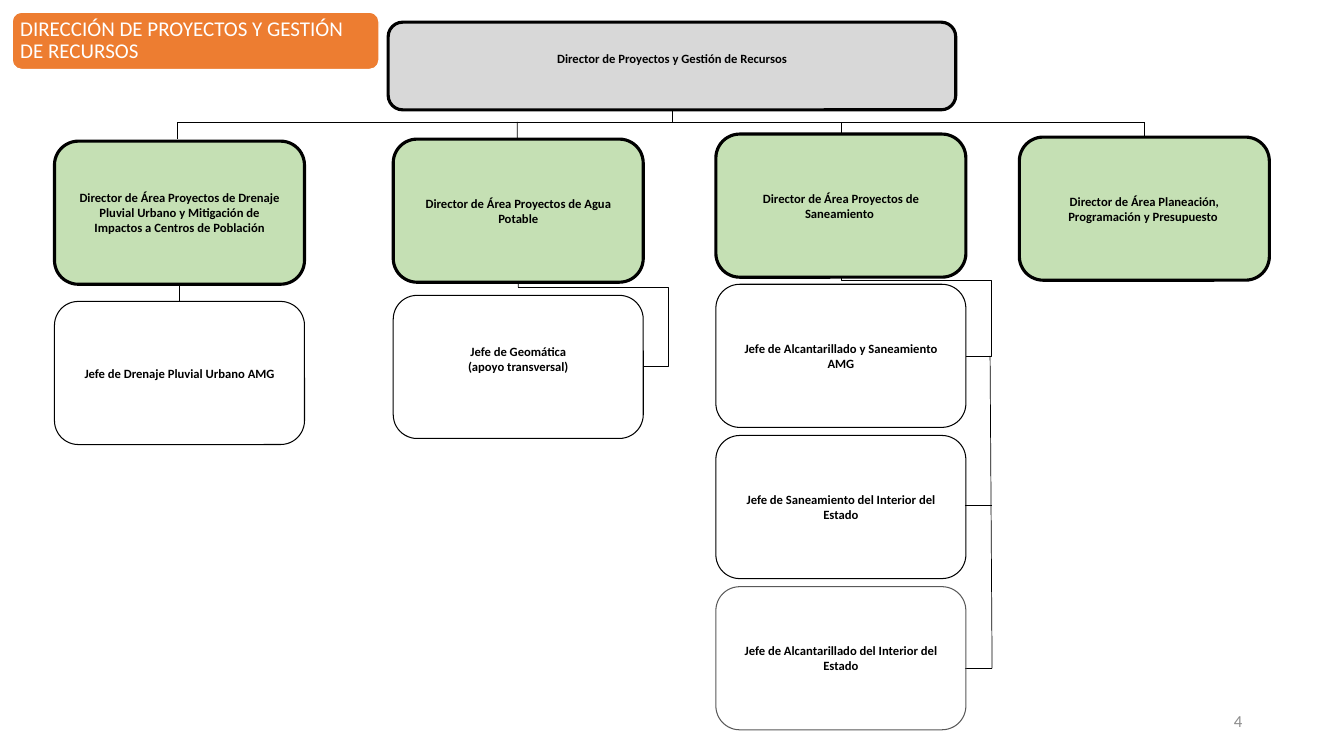
from lxml.etree import SubElement
from pptx import Presentation
from pptx.dml.color import RGBColor
from pptx.enum.shapes import MSO_CONNECTOR, MSO_SHAPE
from pptx.enum.text import MSO_ANCHOR, MSO_AUTO_SIZE, PP_ALIGN
from pptx.oxml.ns import qn
from pptx.util import Inches, Pt


def write(shape, lines, inset, size, color, align, bold=False, extra_bottom=0):
    """Fill a shape with one paragraph per line; extra_bottom lifts the text."""
    frame = shape.text_frame
    settings = {
        "word_wrap": True,
        "auto_size": MSO_AUTO_SIZE.NONE,
        "vertical_anchor": MSO_ANCHOR.MIDDLE,
        "margin_left": Inches(inset),
        "margin_right": Inches(inset),
        "margin_top": Inches(inset),
        "margin_bottom": Inches(inset + extra_bottom),
    }
    for name, value in settings.items():
        setattr(frame, name, value)
    for number, line in enumerate(lines):
        para = frame.paragraphs[0] if number == 0 else frame.add_paragraph()
        para.alignment = align
        span = para.add_run()
        span.text = line
        for name, value in {"name": "Calibri", "size": Pt(size), "bold": bold}.items():
            setattr(span.font, name, value)
        span.font.color.rgb = RGBColor.from_string(color)


def connect(kind, start, end, width):
    line = page.shapes.add_connector(kind, *[Inches(value) for value in start + end])
    line.line.color.rgb = RGBColor.from_string("000000")
    line.line.width = Pt(width)
    SubElement(line.element.spPr, qn("a:effectLst"))
    return line


deck = Presentation()
deck.slide_width, deck.slide_height = Inches(13.33), Inches(7.5)
page = deck.slides.add_slide(deck.slide_layouts[5])

# Heading on its orange band
title = page.shapes.title
title.left, title.top, title.width, title.height = [
    Inches(value) for value in (0.14, 0.15, 3.6, 0.51)]
write(title, ["DIRECCIÓN DE PROYECTOS Y GESTIÓN DE RECURSOS"], 0.06, 15, "FFFFFF",
      PP_ALIGN.LEFT)
title.text_frame.paragraphs[0].line_spacing = 0.9
band = page.shapes.add_shape(
    MSO_SHAPE.ROUNDED_RECTANGLE, Inches(0.12), Inches(0.12), Inches(3.64), Inches(0.57))
band.shadow.inherit = False
band.fill.solid()
band.fill.fore_color.rgb = RGBColor.from_string("ED7D31")
band.line.color.rgb = RGBColor.from_string("FFFFFF")
band.line.width = Pt(1)
title.element.addprevious(band.element)

# Straight connecting lines
BUS_Y = 1.21
straight_lines = [
    ((6.67, 1.1), (6.67, BUS_Y)),
    ((1.76, BUS_Y), (11.35, BUS_Y)),
    ((1.76, 1.38), (1.76, BUS_Y)),
    ((5.14, 2.85), (5.13, BUS_Y)),
    ((8.34, 1.33), (8.34, BUS_Y)),
    ((11.35, 1.36), (11.35, BUS_Y)),
    ((1.78, 2.81), (1.78, 2.99)),
    ((9.82, 3.53), (9.84, 6.63)),
    ((9.57, 5.01), (9.84, 5.01)),
    ((9.57, 6.63), (9.84, 6.63)),
]
for start, end in straight_lines:
    connect(MSO_CONNECTOR.STRAIGHT, start, end, 0.5)

# Bent lines: preset, start, end, rotation in degrees, bend positions
bent_lines = [
    ("bentConnector3", (5.14, 2.85), (6.38, 3.64), 0, [120200]),
    ("bentConnector4", (9.36, 2.52), (8.57, 3.76), 270, [5000, 120200]),
]
for preset, start, end, degrees, bends in bent_lines:
    elbow = connect(MSO_CONNECTOR.ELBOW, start, end, 0.75).element.spPr
    elbow.find(qn("a:xfrm")).set("rot", str(degrees * 60000))
    geometry = elbow.find(qn("a:prstGeom"))
    geometry.set("prst", preset)
    guides = geometry.find(qn("a:avLst"))
    for number, bend in enumerate(bends, 1):
        SubElement(guides, qn("a:gd"), name=f"adj{number}", fmla=f"val {bend}")

# Looks: fill, line colour, line width, inset
HEAD = ("D8D8D8", "000000", 2.25, 0.13)
AREA = ("C5E0B4", "000000", 2.25, 0.13)
CHIEF = (None, "000000", 0.75, 0.1)
GREY_CHIEF = (None, "595959", 0.75, 0.13)
WHITE_CHIEF = ("FFFFFF", "000000", 0.75, 0.1)
WIDTH, HEIGHT = 2.48, 1.42
DRAINAGE_X, WATER_X, SANITATION_X, PLANNING_X = 0.54, 3.9, 7.1, 10.11
LIFT = 0.15

positions = [
    (HEAD, 3.85, 0.22, 5.63, 0.87, ["Director de Proyectos y Gestión de Recursos"], LIFT),
    (AREA, DRAINAGE_X, 1.4, WIDTH, HEIGHT,
     ["Director de Área Proyectos de Drenaje Pluvial Urbano y Mitigación de "
      "Impactos a Centros de Población"], 0),
    (CHIEF, DRAINAGE_X, 2.99, WIDTH, HEIGHT, ["Jefe de Drenaje Pluvial Urbano AMG"], 0),
    (AREA, WATER_X, 1.38, WIDTH, HEIGHT,
     ["Director de Área Proyectos de Agua Potable"], 0),
    (WHITE_CHIEF, WATER_X, 2.93, WIDTH, HEIGHT,
     ["Jefe de Geomática", "(apoyo transversal)"], LIFT),
    (AREA, SANITATION_X, 1.33, WIDTH, HEIGHT,
     ["Director de Área Proyectos de Saneamiento "], 0),
    (CHIEF, SANITATION_X, 2.82, WIDTH, HEIGHT,
     ["Jefe de Alcantarillado y Saneamiento AMG"], 0),
    (CHIEF, SANITATION_X, 4.32, WIDTH, HEIGHT,
     ["Jefe de Saneamiento del Interior del Estado"], 0),
    (GREY_CHIEF, SANITATION_X, 5.82, WIDTH, HEIGHT,
     ["Jefe de Alcantarillado del Interior del Estado"], 0),
    (AREA, PLANNING_X, 1.36, WIDTH, HEIGHT,
     ["Director de Área Planeación, Programación y Presupuesto "], 0),
]
for look, left, top, width, height, lines, lift in positions:
    fill, line_color, line_width, inset = look
    box = page.shapes.add_shape(
        MSO_SHAPE.ROUNDED_RECTANGLE,
        Inches(left), Inches(top), Inches(width), Inches(height))
    box.shadow.inherit = False
    if fill:
        box.fill.solid()
        box.fill.fore_color.rgb = RGBColor.from_string(fill)
    else:
        box.fill.background()
    box.line.color.rgb = RGBColor.from_string(line_color)
    box.line.width = Pt(line_width)
    write(box, lines, inset, 9, "000000", PP_ALIGN.CENTER, True, lift)

page_number = page.shapes.add_textbox(Inches(9.42), Inches(6.95), Inches(3), Inches(0.4))
write(page_number, ["4"], 0.1, 12, "8C8C8C", PP_ALIGN.RIGHT)

deck.save("out.pptx")
